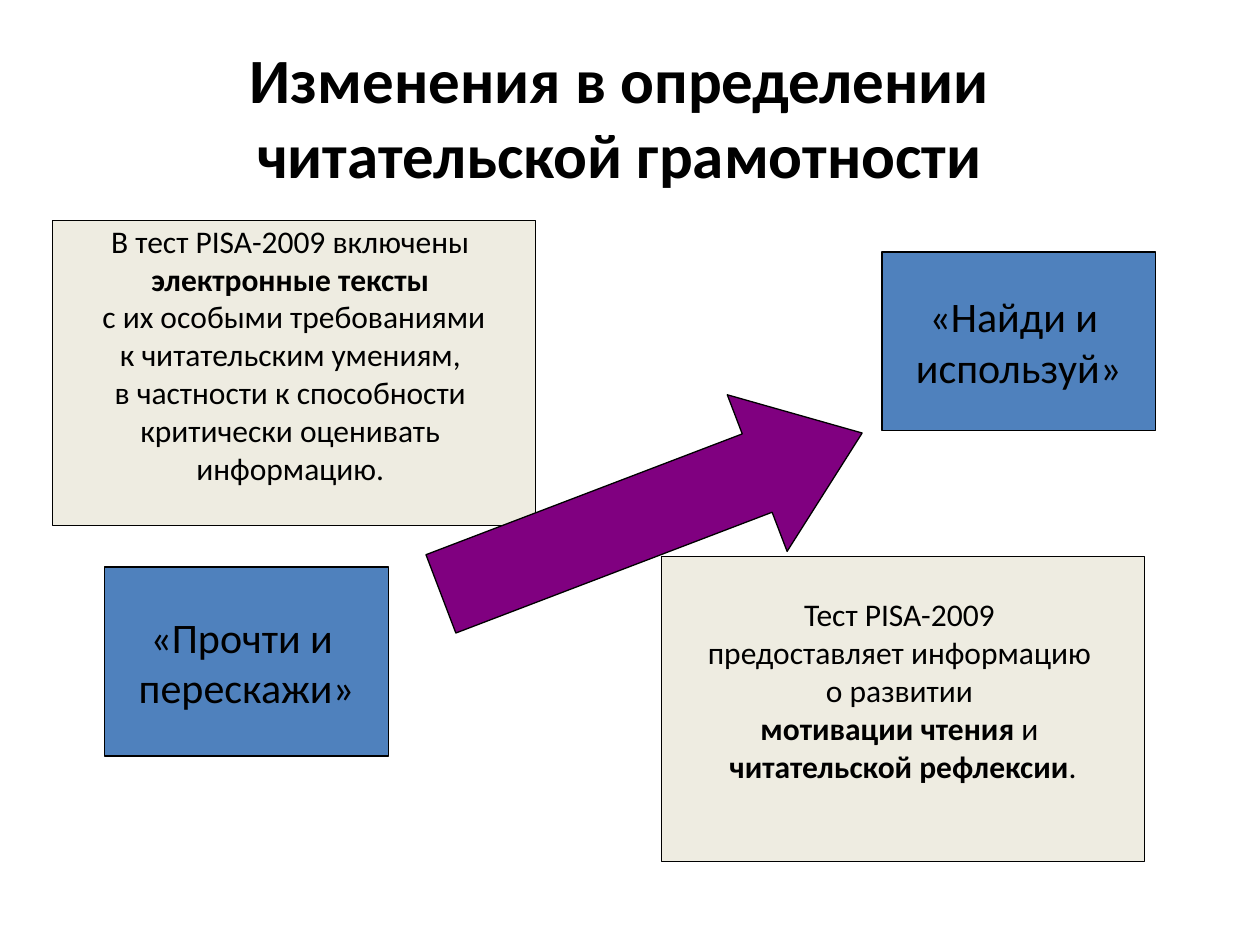
from dataclasses import dataclass

from pptx import Presentation
from pptx.dml.color import RGBColor
from pptx.enum.shapes import MSO_SHAPE
from pptx.enum.text import MSO_ANCHOR, PP_ALIGN
from pptx.util import Cm, Pt


@dataclass(frozen=True)
class Theme:
    font: str = "Calibri"
    ink: RGBColor = RGBColor(0x00, 0x00, 0x00)
    blue: RGBColor = RGBColor(0x4F, 0x81, 0xBD)
    cream: RGBColor = RGBColor(0xEE, 0xEC, 0xE1)
    purple: RGBColor = RGBColor(0x80, 0x00, 0x80)
    title: Pt = Pt(36)
    motto: Pt = Pt(24)
    body: Pt = Pt(18)
    outline: Pt = Pt(0.75)


theme = Theme()


def write_lines(box, lines, size):
    frame = box.text_frame
    frame.vertical_anchor = MSO_ANCHOR.MIDDLE
    frame.text = "\n".join("".join(text for text, bold in line) for line in lines)
    for para, line in zip(frame.paragraphs, lines):
        para.alignment = PP_ALIGN.CENTER
        para.text = ""
        for text, bold in line:
            span = para.add_run()
            span.text = text
            span.font.name = theme.font
            span.font.size = size
            span.font.bold = bold
            span.font.color.rgb = theme.ink


def add_outlined(page, kind, place, fill):
    shape = page.shapes.add_shape(kind, *[Cm(length) for length in place])
    shape.shadow.inherit = False
    shape.fill.solid()
    shape.fill.fore_color.rgb = fill
    shape.line.color.rgb = theme.ink
    shape.line.width = theme.outline
    return shape


deck = Presentation()
deck.slide_width, deck.slide_height = Cm(25.4), Cm(19.05)
page = deck.slides.add_slide(deck.slide_layouts[6])

title = page.shapes.add_textbox(Cm(1.9), Cm(0.43), Cm(21.18), Cm(3.81))
title.text_frame.word_wrap = True
write_lines(title, [[("Изменения в определении читательской грамотности", True)]], theme.title)

mottos = [
    ((2.11, 11.43, 5.72, 3.81), ["«Прочти и ", "перескажи»"]),
    ((17.78, 5.08, 5.51, 3.6), ["«Найди и ", "используй»"]),
]
for place, words in mottos:
    box = add_outlined(page, MSO_SHAPE.RECTANGLE, place, theme.blue)
    box.text_frame.word_wrap = False
    write_lines(box, [[(text, False)] for text in words], theme.motto)

notes = [
    ((1.06, 4.45), [
        [("В тест PISA-2009 включены ", False)],
        [("электронные тексты ", True)],
        [("с их особыми требованиями", False)],
        [("к читательским умениям, ", False)],
        [("в частности к способности ", False)],
        [("критически оценивать ", False)],
        [("информацию. ", False)],
    ]),
    ((13.34, 11.22), [
        [("Тест PISA-2009 ", False)],
        [("предоставляет информацию ", False)],
        [("о развитии ", False)],
        [("мотивации чтения", True), (" и ", False)],
        [("читательской рефлексии", True), (".", False)],
    ]),
]
for index, (corner, lines) in enumerate(notes):
    if index == 1:
        arrow = add_outlined(page, MSO_SHAPE.RIGHT_ARROW, (8.59, 8.66, 9.09, 3.38), theme.purple)
        arrow.rotation = 339.1
        arrow.adjustments[0] = 0.5
        arrow.adjustments[1] = 0.67
    box = add_outlined(page, MSO_SHAPE.RECTANGLE, (*corner, 9.73, 6.15), theme.cream)
    box.text_frame.word_wrap = False
    box.text_frame.margin_bottom = Cm(0.9)
    write_lines(box, lines, theme.body)

deck.save("out.pptx")
